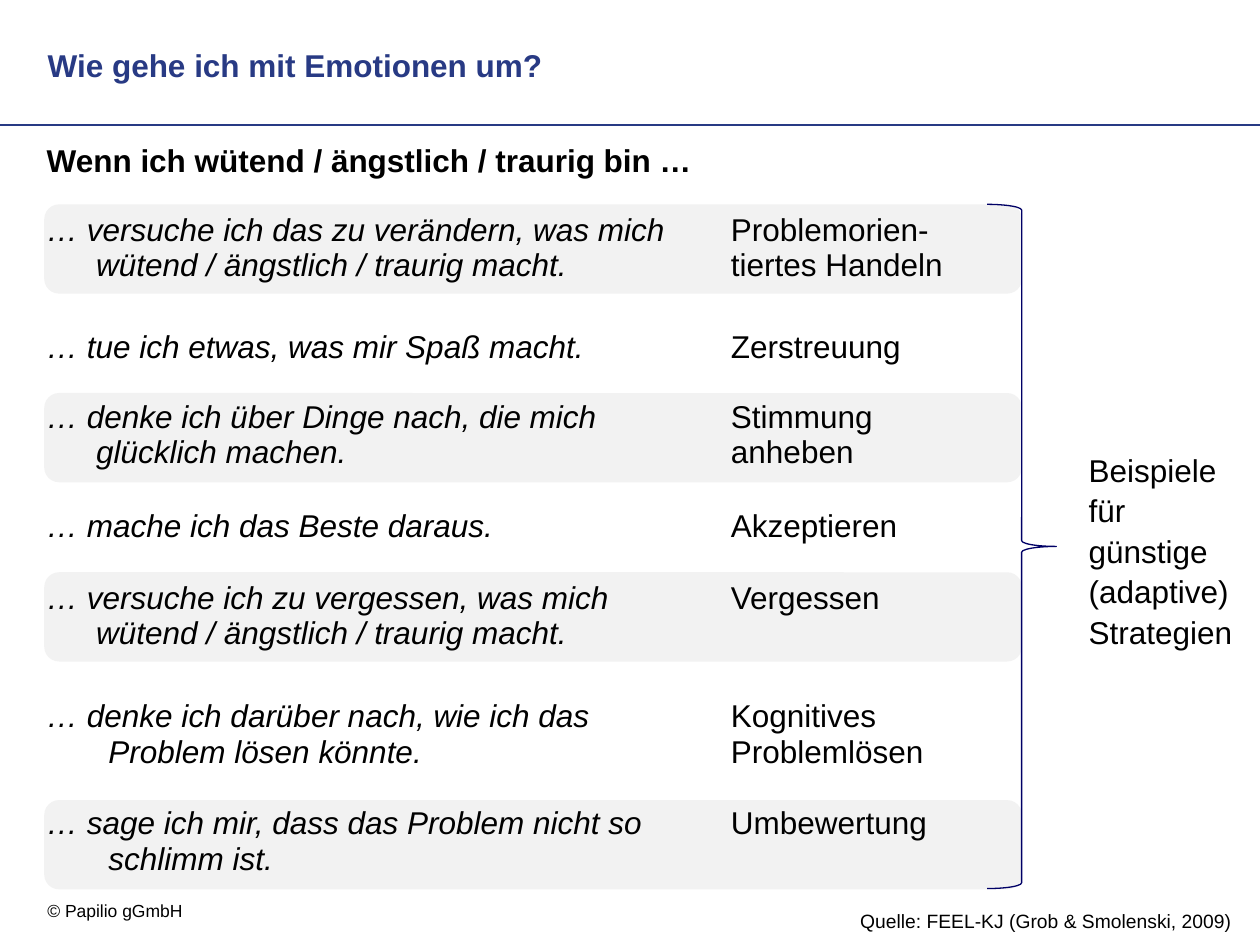
from lxml import etree
from pptx import Presentation
from pptx.dml.color import RGBColor
from pptx.enum.shapes import MSO_CONNECTOR, MSO_SHAPE
from pptx.enum.text import MSO_ANCHOR, MSO_AUTO_SIZE, PP_ALIGN
from pptx.oxml.ns import qn
from pptx.util import Pt

LINE = MSO_CONNECTOR.STRAIGHT
ROUND = MSO_SHAPE.ROUNDED_RECTANGLE
BRACE = MSO_SHAPE.RIGHT_BRACE
TOP = MSO_ANCHOR.TOP
LEFT = PP_ALIGN.LEFT
FIXED = MSO_AUTO_SIZE.NONE
COLORS = {"blue": "283A84", "navy": "000066", "gray": "F2F2F2", "black": "000000"}

HEAD = "Wenn ich wütend / ängstlich / traurig bin …"
ROWS = [
    ("… versuche ich das zu verändern, was mich wütend / ängstlich / traurig macht.",
     "Problemorien-tiertes Handeln", 28.2, 67),
    ("… tue ich etwas, was mir Spaß macht.", "Zerstreuung", 0, 39.6),
    ("… denke ich über Dinge nach, die mich glücklich machen.",
     "Stimmung anheben", 28.2, 62.6),
    ("… mache ich das Beste daraus.", "Akzeptieren", 0, 41),
    ("… versuche ich zu vergessen, was mich wütend / ängstlich / traurig macht.",
     "Vergessen", 28.2, 67.7),
    ("… denke ich darüber nach, wie ich das Problem lösen könnte.",
     "Kognitives Problemlösen", 35.3, 61.2),
    ("… sage ich mir, dass das Problem nicht so schlimm ist.",
     "Umbewertung", 35.3, 47.5),
]


class Deck:
    def __init__(self, slide, font="Arial"):
        self.slide = slide
        self.font = font

    def color(self, name):
        return RGBColor.from_string(COLORS[name])

    def style(self, frame, size, color="black", bold=False, italic=False):
        for para in frame.paragraphs:
            para.alignment = LEFT
            for run in para.runs:
                font = run.font
                font.name, font.size = self.font, Pt(size)
                font.bold, font.italic = bold, italic
                font.color.rgb = self.color(color)

    def title(self, text, x, y, w, h):
        shape = self.slide.shapes.title
        shape.left, shape.top, shape.width, shape.height = map(Pt, (x, y, w, h))
        frame = shape.text_frame
        frame.text = text
        frame.auto_size = FIXED
        frame.vertical_anchor = TOP
        self.style(frame, 18, "blue", bold=True)

    def text(self, text, x, y, w, h, size, space=None):
        frame = self.slide.shapes.add_textbox(*map(Pt, (x, y, w, h))).text_frame
        frame.word_wrap = True
        frame.text = text
        for para in frame.paragraphs:
            para.line_spacing = space
        self.style(frame, size)

    def line(self, x1, y1, x2, y2, color, width):
        line = self.slide.shapes.add_connector(LINE, *map(Pt, (x1, y1, x2, y2)))
        line.line.color.rgb = self.color(color)
        line.line.width = Pt(width)
        etree.SubElement(line.element.spPr, qn("a:effectLst"))

    def bands(self, x, tops, w, h):
        group = self.slide.shapes.add_group_shape()
        for y in tops:
            band = group.shapes.add_shape(ROUND, *map(Pt, (x, y, w, h)))
            band.shadow.inherit = False
            band.fill.solid()
            band.fill.fore_color.rgb = self.color("gray")
            band.line.fill.background()

    def brace(self, x, y, w, h):
        brace = self.slide.shapes.add_shape(BRACE, *map(Pt, (x, y, w, h)))
        brace.shadow.inherit = False
        brace.fill.background()
        brace.line.color.rgb = self.color("navy")
        brace.line.width = Pt(0.75)

    def cell(self, cell, text, indent=0, bold=False, italic=False):
        props = cell._tc.get_or_add_tcPr()
        for side in ("lnL", "lnR", "lnT", "lnB"):
            edge = etree.SubElement(props, qn("a:" + side))
            etree.SubElement(edge, qn("a:noFill"))
        cell.fill.background()
        cell.text_frame.text = text
        if indent:
            para = cell.text_frame.paragraphs[0]._p.get_or_add_pPr()
            para.set("marL", str(Pt(indent)))
            para.set("indent", str(Pt(-indent)))
        self.style(cell.text_frame, 18, bold=bold, italic=italic)

    def table(self, head, rows, x, y, cols, top):
        high = top + sum(row[3] for row in rows)
        frame = self.slide.shapes.add_table(
            len(rows) + 1, len(cols), *map(Pt, (x, y, sum(cols), high)))
        table = frame.table
        table.first_row = table.horz_banding = False
        for col, width in zip(table.columns, cols):
            col.width = Pt(width)
        table.rows[0].height = Pt(top)
        self.cell(table.cell(0, 0), head, bold=True)
        self.cell(table.cell(0, 1), "")
        for i, (say, name, indent, height) in enumerate(rows, 1):
            table.rows[i].height = Pt(height)
            self.cell(table.cell(i, 0), say, indent, italic=True)
            self.cell(table.cell(i, 1), name)


def main():
    prs = Presentation()
    prs.slide_width, prs.slide_height = Pt(720), Pt(540)
    deck = Deck(prs.slides.add_slide(prs.slide_layouts[5]))
    deck.line(0, 71.5, 720, 71.5, "blue", 1.5)
    deck.text("© Papilio gGmbH", 20, 510.5, 156, 19.5, 10)
    deck.bands(25.3, (116.8, 224.6, 327, 457.2), 558.7, 51)
    deck.title("Wie gehe ich mit Emotionen um?", 20, 22.5, 550, 28)
    deck.table(HEAD, ROWS, 19.5, 78.5, (391, 147.6), 39.6)
    deck.brace(564, 116.8, 39.6, 391)
    deck.text("Beispiele für\ngünstige (adaptive) Strategien",
              615, 252.7, 105, 116.6, 18, 1.07)
    deck.text("Quelle: FEEL-KJ (Grob & Smolenski, 2009)",
              484.5, 516.2, 230, 21, 11)
    prs.save("out.pptx")


if __name__ == "__main__":
    main()
